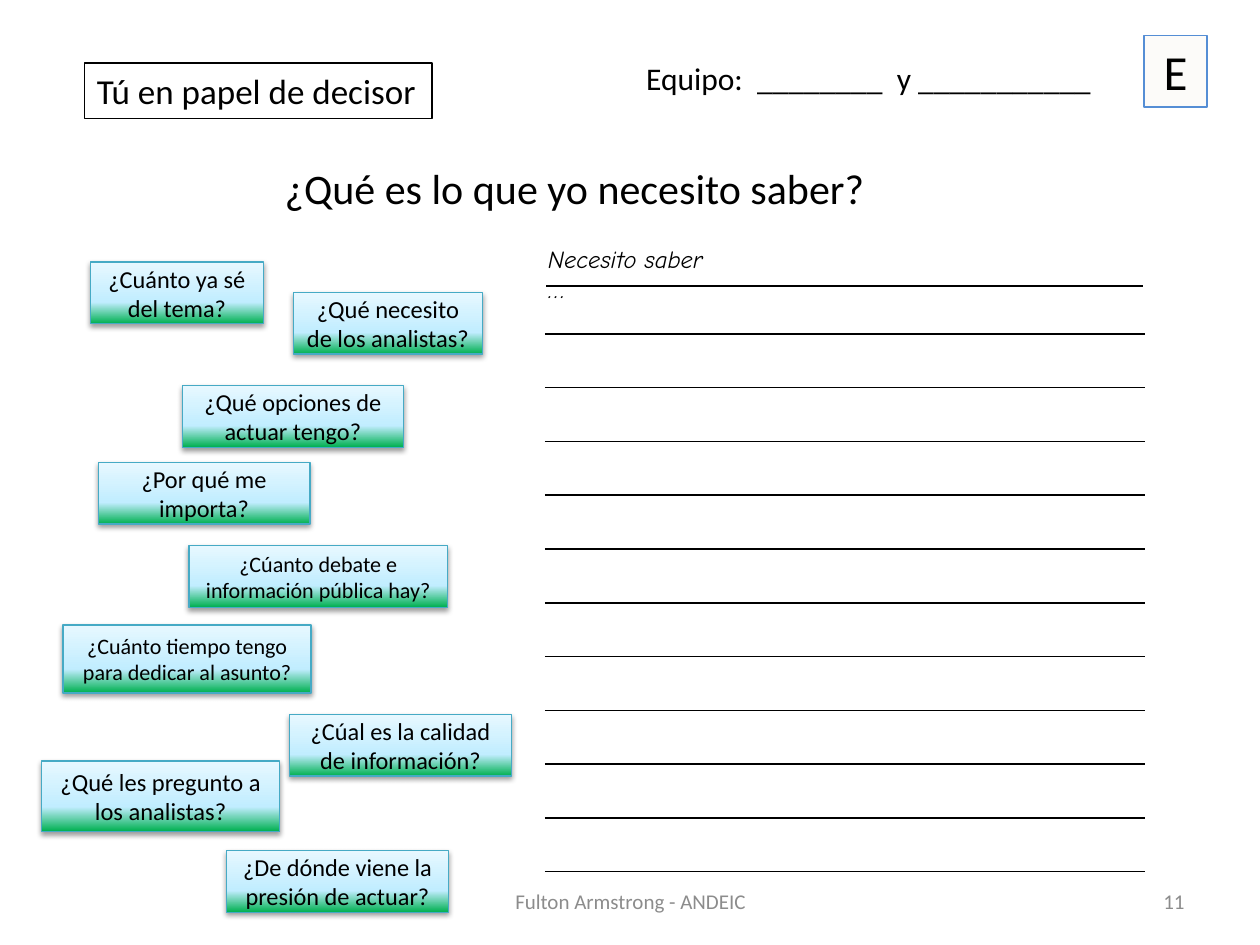
from lxml import etree
from pptx import Presentation
from pptx.dml.color import RGBColor
from pptx.enum.shapes import MSO_SHAPE
from pptx.enum.text import MSO_ANCHOR, PP_ALIGN
from pptx.oxml import parse_xml
from pptx.oxml.ns import nsdecls
from pptx.util import Inches, Pt

BLACK = RGBColor(0x00, 0x00, 0x00)
GREY = RGBColor(0x8C, 0x8C, 0x8C)
TEAL = RGBColor(0x46, 0xAA, 0xC5)
BLUE = RGBColor(0x55, 0x8E, 0xD5)
CREAM = RGBColor(0xFC, 0xFB, 0xF9)
GREEN = RGBColor(0x00, 0xB0, 0x50)
SKY = RGBColor(0xC1, 0xED, 0xFF)
PALE = RGBColor(0xE7, 0xF8, 0xFF)
GRADIENT = [(0, GREEN), (35, SKY), (100, PALE)]

TITLE = ("¿Qué es lo que yo necesito saber?", (2.16, 1.24, 4.83, 0.5))

# text, (left, top, width, height), size
QUESTIONS = [
    ("¿Cuánto ya sé del tema?", (0.72, 2.08, 1.37, 0.49), 13.9),
    ("¿Qué necesito de los analistas?", (2.33, 2.32, 1.5, 0.49), 14),
    ("¿Qué opciones de actuar tengo?", (1.45, 3.06, 1.75, 0.49), 13.9),
    ("¿Por qué me importa?", (0.78, 3.67, 1.68, 0.49), 13.9),
    ("¿Cúanto debate e información pública hay?", (1.5, 4.33, 2.05, 0.49), 12.6),
    ("¿Cuánto tiempo tengo para dedicar al asunto?", (0.5, 4.96, 1.97, 0.54), 12.6),
    ("¿Cúal es la calidad de información?", (2.3, 5.67, 1.76, 0.49), 13.9),
    ("¿Qué les pregunto a los analistas?", (0.33, 6.04, 1.89, 0.56), 14),
    ("¿De dónde viene la presión de actuar?", (1.8, 6.75, 1.76, 0.49), 13.9),
]

# text, box, alignment, anchor, font
LABELS = [
    ("Equipo:  ________  y ___________", (5.03, 0.42, 3.91, 0.4),
     PP_ALIGN.LEFT, MSO_ANCHOR.TOP, {"size": Pt(18)}),
    ("Necesito saber …", (4.25, 1.89, 1.53, 0.34), PP_ALIGN.LEFT, MSO_ANCHOR.TOP,
     {"size": Pt(14), "name": "Comic Neue", "italic": True}),
    ("Fulton Armstrong - ANDEIC", (3.42, 6.95, 3.17, 0.4),
     PP_ALIGN.CENTER, MSO_ANCHOR.MIDDLE, {"size": Pt(12), "color": GREY}),
    ("11", (7.17, 6.95, 2.33, 0.4),
     PP_ALIGN.RIGHT, MSO_ANCHOR.MIDDLE, {"size": Pt(12), "color": GREY}),
]

# text, box, alignment, fill, line, size
FRAMES = [
    ("Tú en papel de decisor", (0.67, 0.5, 2.76, 0.44), PP_ALIGN.LEFT, None, BLACK, 20),
    ("E", (9.08, 0.28, 0.5, 0.57), PP_ALIGN.CENTER, CREAM, BLUE, 28),
]

LINES_BOX = (4.33, 2.27, 4.75, 4.65)
LINES_ROWS = 11
FIRST_ROW = 0.38


def inches(box):
    return [Inches(v) for v in box]


def write(sp, text, align, anchor, font):
    tf = sp.text_frame
    tf.word_wrap = True
    tf.vertical_anchor = anchor
    p = tf.paragraphs[0]
    p.alignment = align
    r = p.add_run()
    r.text = text
    values = {"name": "Calibri", "color": BLACK, **font}
    r.font.color.rgb = values.pop("color")
    for key, value in values.items():
        setattr(r.font, key, value)


def add_rect(slide, box, line):
    sp = slide.shapes.add_shape(MSO_SHAPE.RECTANGLE, *inches(box))
    sp.shadow.inherit = False
    sp.line.color.rgb = line
    sp.line.width = Pt(0.75)
    return sp


def fill_gradient(sp):
    """Run the gradient stops from the bottom edge up."""
    sp.fill.gradient()
    sp.fill.gradient_angle = 90
    stops = sp.fill._fill._gradFill.gsLst
    for stop in list(stops):
        stops.remove(stop)
    for pos, color in GRADIENT:
        stops.append(parse_xml(
            f'<a:gs {nsdecls("a")} pos="{pos * 1000}"><a:srgbClr val="{color}"/></a:gs>'))


def drop_shadow(sp):
    effects = sp._element.spPr.find(f"{{{sp._element.nsmap['a']}}}effectLst")
    effects.append(parse_xml(
        f'<a:outerShdw {nsdecls("a")} blurRad="{Pt(3.1)}" dist="{Pt(1.6)}" dir="5400000" '
        'rotWithShape="0"><a:srgbClr val="000000"><a:alpha val="38000"/></a:srgbClr>'
        '</a:outerShdw>'))


def add_writing_lines(slide):
    table = slide.shapes.add_table(LINES_ROWS, 1, *inches(LINES_BOX)).table
    table.first_row = table.horz_banding = False
    rest = (LINES_BOX[3] - FIRST_ROW) / (LINES_ROWS - 1)
    for i, row in enumerate(table.rows):
        row.height = Inches(rest if i else FIRST_ROW)
        cell = row.cells[0]
        cell.margin_top = cell.margin_bottom = 0
        cell.fill.background()
        tcPr = cell._tc.get_or_add_tcPr()
        for at, side in enumerate(("lnT", "lnB")):
            tcPr.insert(at, parse_xml(
                f'<a:{side} {nsdecls("a")} w="{Pt(1)}"><a:solidFill>'
                f'<a:srgbClr val="{BLACK}"/></a:solidFill></a:{side}>'))


def main():
    prs = Presentation()
    prs.slide_width, prs.slide_height = Inches(10), Inches(7.5)
    slide = prs.slides.add_slide(prs.slide_layouts[5])

    text, box = TITLE
    title = slide.shapes.title
    title.left, title.top, title.width, title.height = inches(box)
    write(title, text, PP_ALIGN.LEFT, MSO_ANCHOR.TOP, {"size": Pt(24)})

    add_writing_lines(slide)

    for text, box, size in QUESTIONS:
        sp = add_rect(slide, box, TEAL)
        fill_gradient(sp)
        drop_shadow(sp)
        write(sp, text, PP_ALIGN.CENTER, MSO_ANCHOR.MIDDLE, {"size": Pt(size)})

    for text, box, align, fill, line, size in FRAMES:
        sp = add_rect(slide, box, line)
        if fill is None:
            sp.fill.background()
        else:
            sp.fill.solid()
            sp.fill.fore_color.rgb = fill
        write(sp, text, align, MSO_ANCHOR.TOP, {"size": Pt(size)})

    for text, box, align, anchor, font in LABELS:
        write(slide.shapes.add_textbox(*inches(box)), text, align, anchor, font)

    prs.save("out.pptx")


if __name__ == "__main__":
    main()
